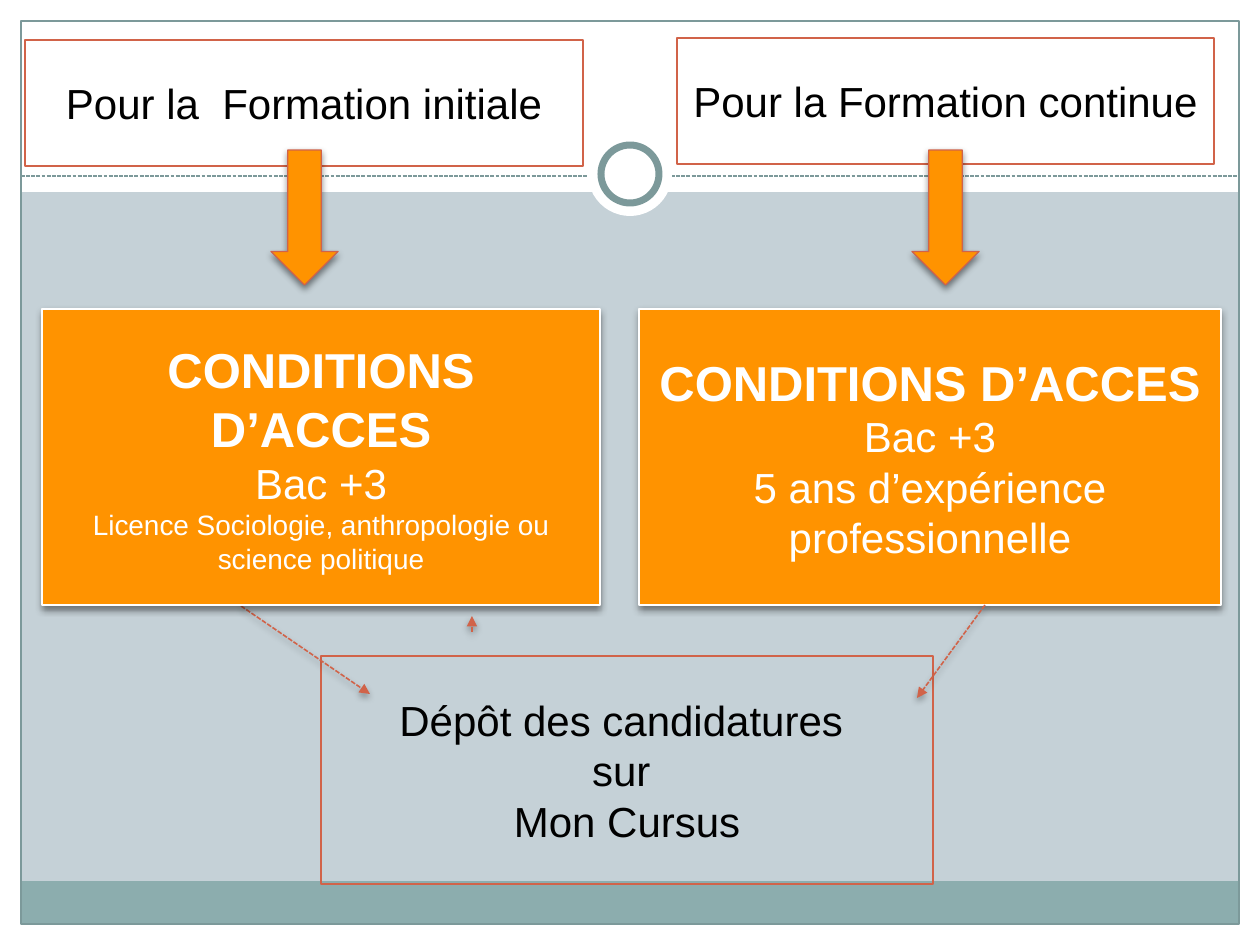
from lxml import etree
from pptx import Presentation
from pptx.dml.color import RGBColor
from pptx.enum import dml, shapes, text
from pptx.oxml import ns
from pptx import util as u

EMU_PER_PX = 914400 / 126
WIDTH, HEIGHT = 1260, 945

WHITE = RGBColor(0xFF, 0xFF, 0xFF)
BLACK = RGBColor(0x00, 0x00, 0x00)
MIST = RGBColor(0xC5, 0xD1, 0xD7)
TEAL = RGBColor(0x8C, 0xAD, 0xAE)
SLATE = RGBColor(0x7C, 0x99, 0x9A)
ORANGE = RGBColor(0xFF, 0x93, 0x00)
BRICK = RGBColor(0xD1, 0x63, 0x49)

RECT = shapes.MSO_SHAPE.RECTANGLE
OVAL = shapes.MSO_SHAPE.OVAL
DOWN_ARROW = shapes.MSO_SHAPE.DOWN_ARROW


def px(length):
    return u.Emu(round(length * EMU_PER_PX))


class SlideBuilder:
    font_name = "Arial"

    def __init__(self, slide):
        self.slide = slide

    def background(self, color):
        fill = self.slide.background.fill
        fill.solid()
        fill.fore_color.rgb = color

    def effects(self, item, shadow_alpha=None):
        properties = item.element.spPr
        effect_list = properties.find(ns.qn("a:effectLst"))
        if effect_list is None:
            effect_list = etree.SubElement(properties, ns.qn("a:effectLst"))
        if shadow_alpha:
            shadow = etree.SubElement(
                effect_list, ns.qn("a:outerShdw"), blurRad=str(u.Pt(4)),
                dist=str(u.Pt(2)), dir="5400000", rotWithShape="0")
            black = etree.SubElement(shadow, ns.qn("a:srgbClr"), val="000000")
            etree.SubElement(black, ns.qn("a:alpha"), val=str(shadow_alpha * 1000))

    def shape(self, kind, box, fill=None, line=None, weight=0.75, shadow=None):
        item = self.slide.shapes.add_shape(kind, *map(px, box))
        item.shadow.inherit = False
        if fill is None:
            item.fill.background()
        else:
            item.fill.solid()
            item.fill.fore_color.rgb = fill
        if line is None:
            item.line.fill.background()
        else:
            item.line.color.rgb = line
            item.line.width = u.Pt(weight)
        if shadow:
            self.effects(item, shadow)
        return item

    def label(self, item, lines, color):
        frame = item.text_frame
        frame.word_wrap = True
        frame.vertical_anchor = text.MSO_ANCHOR.MIDDLE
        for index, (words, size, bold) in enumerate(lines):
            paragraph = frame.add_paragraph() if index else frame.paragraphs[0]
            paragraph.text = words
            paragraph.alignment = text.PP_ALIGN.CENTER
            style = {"name": self.font_name, "size": u.Pt(size), "bold": bold}
            for run in paragraph.runs:
                for key, value in style.items():
                    setattr(run.font, key, value)
                run.font.color.rgb = color

    def outlined_box(self, box, *lines):
        item = self.shape(RECT, box, line=BRICK)
        self.label(item, [(words, 24, False) for words in lines], BLACK)

    def card(self, box, *lines):
        item = self.shape(RECT, box, ORANGE, WHITE, shadow=45)
        heading = ("CONDITIONS D’ACCES", 28, True)
        self.label(item, [heading, ("Bac +3", 24, False), *lines], WHITE)

    def down_arrow(self, left):
        self.shape(DOWN_ARROW, (left, 150, 67, 135), ORANGE, BRICK, shadow=45)

    def dashed_line(self, start, end, color, weight=0.75, shadow=None, arrow=False):
        item = self.slide.shapes.add_connector(
            shapes.MSO_CONNECTOR.STRAIGHT, *map(px, (*start, *end)))
        item.line.color.rgb = color
        item.line.width = u.Pt(weight)
        item.line.dash_style = dml.MSO_LINE.SQUARE_DOT
        if arrow:
            outline = item.element.spPr.find(ns.qn("a:ln"))
            etree.SubElement(outline, ns.qn("a:tailEnd"), type="triangle")
        self.effects(item, shadow)


def main():
    deck = Presentation()
    deck.slide_width, deck.slide_height = px(WIDTH), px(HEIGHT)
    page = SlideBuilder(deck.slides.add_slide(deck.slide_layouts[6]))

    page.background(MIST)
    margin = 21
    inner = WIDTH - 2 * margin
    for band in ((0, HEIGHT - margin, WIDTH, margin), (0, 0, WIDTH, 192),
                 (0, 0, margin, HEIGHT), (WIDTH - margin, 0, margin, HEIGHT)):
        page.shape(RECT, band, WHITE)
    page.shape(RECT, (margin, 881, inner, 43), TEAL)
    page.shape(RECT, (margin, margin, inner, HEIGHT - 2 * margin), line=SLATE)
    page.dashed_line((margin, 176), (WIDTH - margin, 176), SLATE)
    for diameter, ring in ((84, None), (58, SLATE)):
        corner = (WIDTH - diameter) // 2
        page.shape(OVAL, (corner, 174 - diameter // 2, diameter, diameter),
                   WHITE, ring, 4)

    page.outlined_box((25, 40, 558, 126), "Pour la  Formation initiale")
    page.outlined_box((677, 38, 537, 126), "Pour la Formation continue")
    page.card((639, 309, 582, 296),
              ("5 ans d’expérience professionnelle", 24, False))
    page.outlined_box((321, 656, 612, 228),
                      "Dépôt des candidatures \vsur ", "Mon Cursus")
    for start, end in (((241, 606), (370, 694)), ((472, 632), (472, 616)),
                       ((985, 605), (917, 698))):
        page.dashed_line(start, end, BRICK, 0.9, shadow=35, arrow=True)
    page.card((42, 309, 558, 296),
              ("Licence Sociologie, anthropologie ou science politique", 16, False))
    for left in (271, 912):
        page.down_arrow(left)

    deck.save("out.pptx")


if __name__ == "__main__":
    main()
